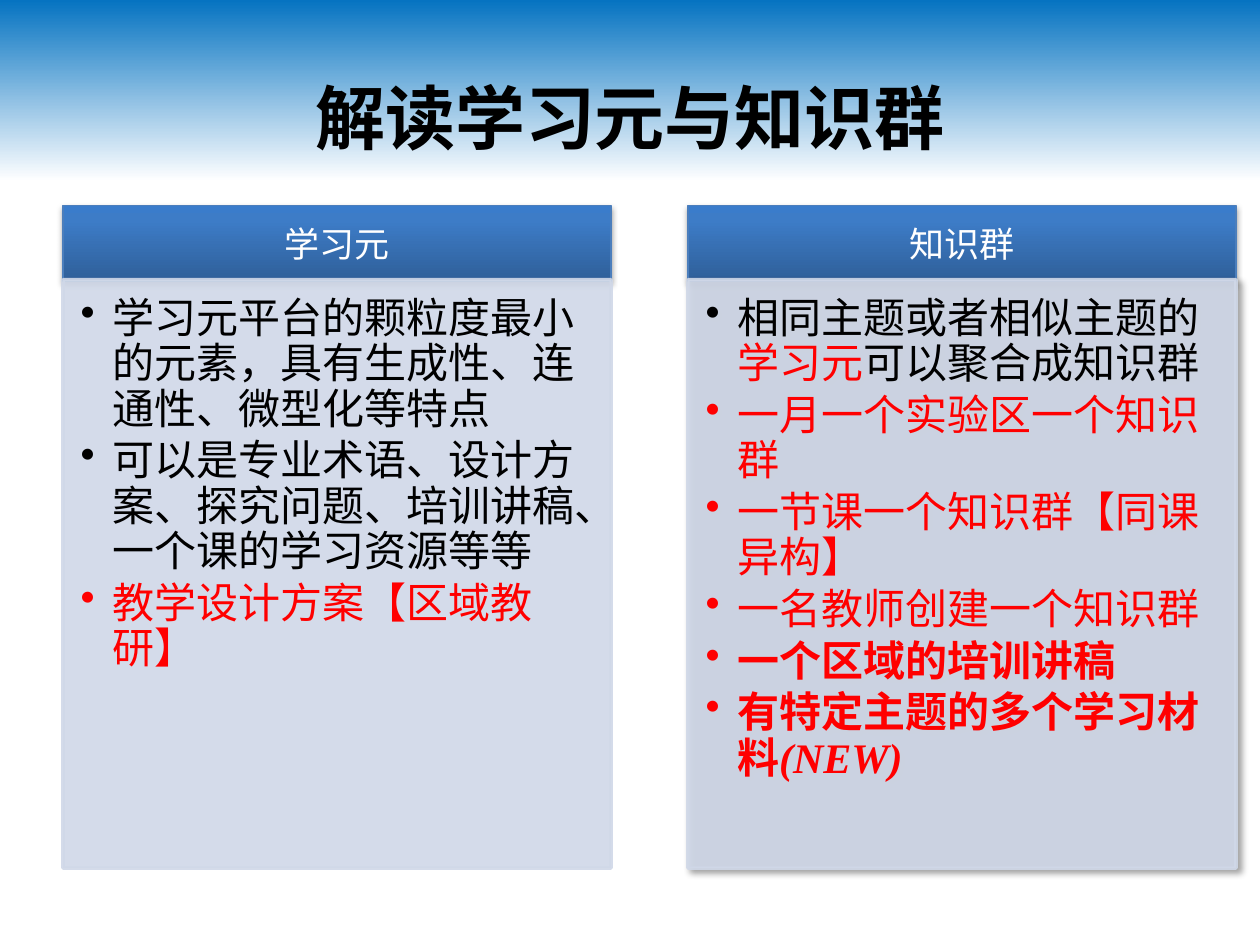
import pptx
import pptx.dml.color
import pptx.enum.shapes
import pptx.enum.text
import pptx.oxml.ns
import pptx.util
import lxml.etree

qn = pptx.oxml.ns.qn
Inches = pptx.util.Inches
Pt = pptx.util.Pt
RECTANGLE = pptx.enum.shapes.MSO_SHAPE.RECTANGLE
MIDDLE = pptx.enum.text.MSO_ANCHOR.MIDDLE
CENTER = pptx.enum.text.PP_ALIGN.CENTER

CJK = "Noto Sans CJK SC"
RED = "FF0000"
BLACK = "000000"
PALE = "D0D8E8"


def color(value):
    return pptx.dml.color.RGBColor.from_string(value)


def add(parent, tag, **attributes):
    """Append a DrawingML element to parent and return it."""
    child = lxml.etree.SubElement(parent, qn("a:" + tag))
    for name, value in attributes.items():
        child.set(name, str(value))
    return child


deck = pptx.Presentation()
deck.slide_width = Inches(10)
deck.slide_height = Inches(7.5)
page = deck.slides.add_slide(deck.slide_layouts[6])

# Column grid
column_left, column_step, column_width = 0.5, 4.96, 4.35
header_top, header_height = 1.63, 0.6
body_top, body_height = 2.22, 4.67

# Each paragraph is a list of runs: text, colour, bold
columns = [
    ("学习元", [
        [("学习元平台的颗粒度最小的元素，具有生成性、连通性、微型化等特点", BLACK, False)],
        [("可以是专业术语、设计方案、探究问题、培训讲稿、一个课的学习资源等等", BLACK, False)],
        [("教学设计方案【区域教研】", RED, False)],
    ]),
    ("知识群", [
        [("相同主题或者相似主题的", BLACK, False), ("学习元", RED, False),
         ("可以聚合成知识群", BLACK, False)],
        [("一月一个实验区一个知识群", RED, False)],
        [("一节课一个知识群【同课异构】", RED, False)],
        [("一名教师创建一个知识群", RED, False)],
        [("一个区域的培训讲稿", RED, True)],
        [("有特定主题的多个学习材料", RED, True), ("(NEW)", RED, True)],
    ]),
]

banner = page.shapes.add_shape(RECTANGLE, 0, Inches(-0.03), deck.slide_width, Inches(1.47))
banner.line.fill.background()
gradients = [(banner, 270, [(0, "0070C0"), (100, "FFFFFF")])]

title = page.shapes.add_textbox(Inches(0.5), Inches(0.3), Inches(9), Inches(1.25))
title.text_frame.text = "解读学习元与知识群"
headings = [(title, 40, BLACK, True)]
shadows = []

for index, (heading, items) in enumerate(columns):
    left = Inches(column_left + index * column_step)
    header = page.shapes.add_shape(
        RECTANGLE, left, Inches(header_top), Inches(column_width), Inches(header_height))
    header.line.color.rgb = color("4B7EBC")
    header.line.width = Pt(0.75)
    header.text_frame.text = heading
    gradients.append((header, 90, [(0, "2F5F99"), (80, "3D7CC7"), (100, "3A7CCB")]))
    headings.append((header, 20, "FFFFFF", False))
    shadows.append((header, 3.1, 1.8, 90, 35))

    body = page.shapes.add_shape(
        RECTANGLE, left, Inches(body_top), Inches(column_width), Inches(body_height))
    body.shadow.inherit = False
    body.fill.solid()
    body.fill.fore_color.rgb = color(PALE)
    body.line.color.rgb = color(PALE)
    body.line.width = Pt(2)
    for tint in body._element.spPr.iter(qn("a:srgbClr")):
        add(tint, "alpha", val=90000)
    if index == 1:
        shadows.append((body, 4, 3, 45, 40))

    frame = body.text_frame
    frame.word_wrap = True
    frame.vertical_anchor = pptx.enum.text.MSO_ANCHOR.TOP
    frame.margin_left = frame.margin_top = Inches(0.14)
    frame.margin_right, frame.margin_bottom = Inches(0.19), Inches(0.21)
    for number, runs in enumerate(items):
        para = frame.add_paragraph() if number else frame.paragraphs[0]
        para.alignment = pptx.enum.text.PP_ALIGN.LEFT
        para.line_spacing = 0.9
        para.space_after = Pt(3.6)
        properties = para._p.get_or_add_pPr()
        properties.set("marL", str(Inches(0.25)))
        properties.set("indent", str(Inches(-0.25)))
        add(properties, "buChar", char="•")
        para.font.size = Pt(24)
        for text, shade, bold in runs:
            span = para.add_run()
            span.text = text
            span.font.color.rgb = color(shade)
            span.font.bold = bold
            span.font.italic = text == "(NEW)"
            span.font.name = "Times New Roman" if text == "(NEW)" else CJK
            add(span.font._element, "ea", typeface=CJK)

for box, size, shade, bold in headings:
    frame = box.text_frame
    frame.word_wrap = True
    frame.vertical_anchor = MIDDLE
    para = frame.paragraphs[0]
    para.alignment = CENTER
    para.font.size = Pt(size)
    para.font.bold = bold
    para.font.color.rgb = color(shade)
    para.font.name = CJK
    add(para.font._element, "ea", typeface=CJK)

for box, angle, stops in gradients:
    box.shadow.inherit = False
    box.fill.gradient()
    box.fill.gradient_angle = angle
    stop_list = box._element.spPr.find(".//" + qn("a:gsLst"))
    stop_list.clear()
    for position, shade in stops:
        add(add(stop_list, "gs", pos=position * 1000), "srgbClr", val=color(shade))

for box, blur, distance, direction, opacity in shadows:
    effects = box._element.spPr.find(qn("a:effectLst"))
    shadow = add(effects, "outerShdw", blurRad=Pt(blur), dist=Pt(distance),
                 dir=direction * 60000, algn="ctr", rotWithShape=0)
    add(add(shadow, "srgbClr", val=color(BLACK)), "alpha", val=opacity * 1000)

deck.save("out.pptx")
